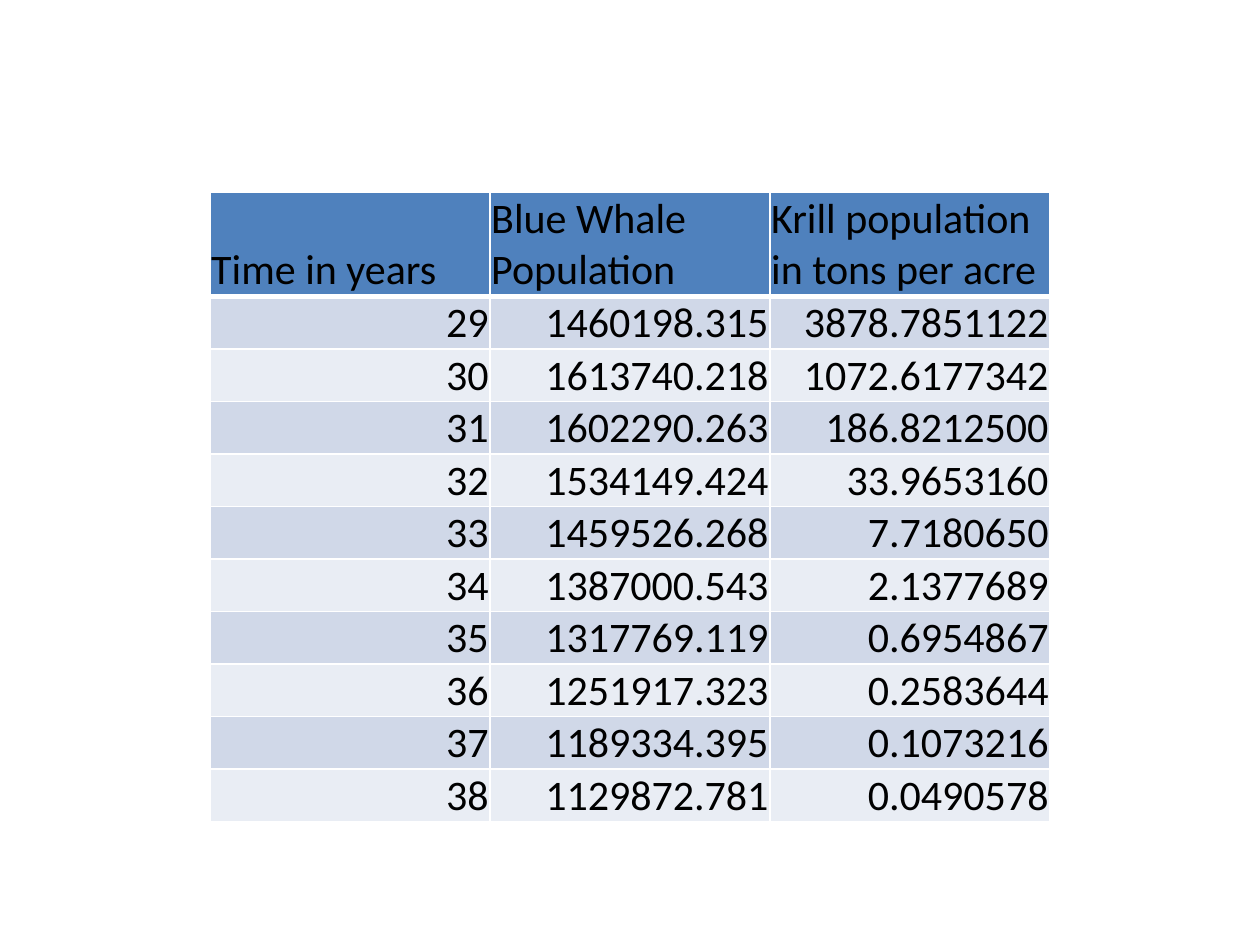
from dataclasses import dataclass

from lxml import etree
from pptx import Presentation
from pptx import util as u
from pptx.dml import color
from pptx.enum import text
from pptx.oxml import ns

HEADINGS = ("Time in years", "Blue Whale Population", "Krill population in tons per acre")
FIRST_YEAR = 29
POPULATIONS = (
    ("1460198.315", "3878.7851122"),
    ("1613740.218", "1072.6177342"),
    ("1602290.263", "186.8212500"),
    ("1534149.424", "33.9653160"),
    ("1459526.268", "7.7180650"),
    ("1387000.543", "2.1377689"),
    ("1317769.119", "0.6954867"),
    ("1251917.323", "0.2583644"),
    ("1189334.395", "0.1073216"),
    ("1129872.781", "0.0490578"),
)


def rgb(hex_code):
    return color.RGBColor.from_string(hex_code)


@dataclass
class SlideWriter:
    slide: object
    font: str = "Calibri"
    size: float = 24
    ink: str = "000000"
    rule: str = "FFFFFF"
    heading_fill: str = "4F81BD"
    bands: tuple = ("D0D8E8", "E9EDF4")
    inset: float = 0.72

    def borders(self, cell, widths):
        properties = cell._tc.get_or_add_tcPr()
        for side, width in widths.items():
            line = etree.SubElement(properties, ns.qn(f"a:ln{side}"), w=str(u.Pt(width)))
            solid = etree.SubElement(line, ns.qn("a:solidFill"))
            etree.SubElement(solid, ns.qn("a:srgbClr"), val=self.rule)

    def cell(self, cell, content, fill, align, widths):
        self.borders(cell, widths)
        cell.fill.solid()
        cell.fill.fore_color.rgb = rgb(fill)
        cell.margin_left = cell.margin_right = cell.margin_top = u.Pt(self.inset)
        cell.margin_bottom = u.Pt(0)
        cell.vertical_anchor = text.MSO_ANCHOR.BOTTOM
        cell.text = content
        paragraph = cell.text_frame.paragraphs[0]
        paragraph.alignment = align
        paragraph.font.name = self.font
        paragraph.font.size = u.Pt(self.size)
        paragraph.font.bold = False
        paragraph.font.color.rgb = rgb(self.ink)

    def table(self, rows, left, top, column_width, row_height):
        columns = len(rows[0])
        frame = self.slide.shapes.add_table(
            len(rows), columns, u.Pt(left), u.Pt(top),
            u.Pt(column_width * columns), u.Pt(row_height * len(rows)))
        for r, row in enumerate(rows):
            heading = r == 0
            fill = self.heading_fill if heading else self.bands[(r - 1) % 2]
            align = text.PP_ALIGN.LEFT if heading else text.PP_ALIGN.RIGHT
            widths = {"L": 1, "R": 1, "T": 3 if r == 1 else 1, "B": 3 if heading else 1}
            for c, content in enumerate(row):
                self.cell(frame.table.cell(r, c), content, fill, align, widths)


def main():
    deck = Presentation()
    deck.slide_width, deck.slide_height = u.Pt(720), u.Pt(540)
    writer = SlideWriter(deck.slides.add_slide(deck.slide_layouts[6]))
    years = [(str(year), *counts) for year, counts in enumerate(POPULATIONS, FIRST_YEAR)]
    writer.table([HEADINGS, *years], left=120, top=110, column_width=160, row_height=29.2)
    deck.save("out.pptx")


if __name__ == "__main__":
    main()
